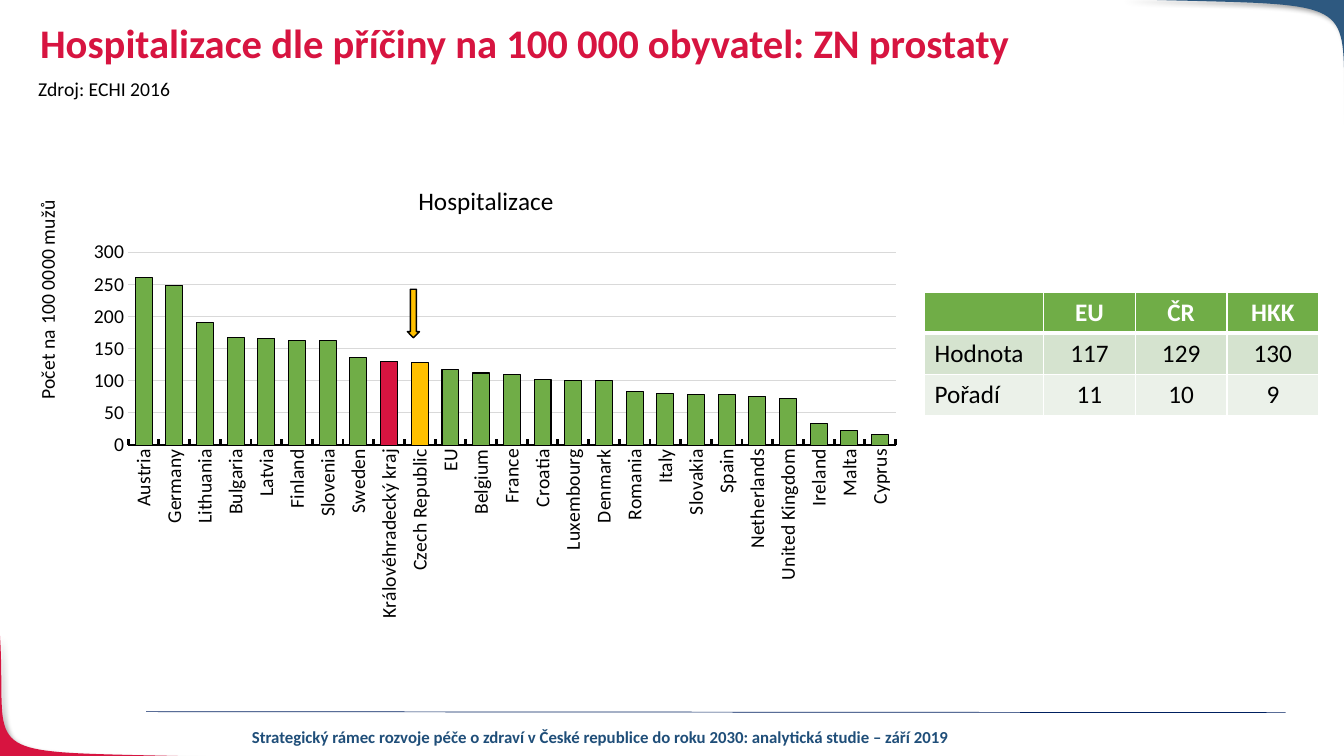
from lxml import etree
from pptx import Presentation
from pptx.chart.data import CategoryChartData
from pptx.dml.color import RGBColor
from pptx.enum.chart import XL_CHART_TYPE, XL_TICK_MARK
from pptx.enum.shapes import MSO_CONNECTOR, MSO_SHAPE
from pptx.enum.text import PP_ALIGN
from pptx.oxml import parse_xml
from pptx.oxml.ns import nsdecls, qn
from pptx.util import Inches, Pt

BLACK = RGBColor(0x00, 0x00, 0x00)
WHITE = RGBColor(0xFF, 0xFF, 0xFF)
RED = RGBColor(0xD7, 0x14, 0x40)
BLUE = RGBColor(0x2E, 0x59, 0x80)
NAVY = RGBColor(0x00, 0x20, 0x60)
FOOTER_BLUE = RGBColor(0x1F, 0x4E, 0x79)
GREEN = RGBColor(0x70, 0xAD, 0x47)
YELLOW = RGBColor(0xFF, 0xC0, 0x00)
GRID = RGBColor(0xD9, 0xD9, 0xD9)
ROW_FILLS = [GREEN, RGBColor(0xD5, 0xE3, 0xCF), RGBColor(0xEB, 0xF1, 0xE9)]

HOSPITALIZATIONS = {
    "Austria": 261, "Germany": 248, "Lithuania": 190, "Bulgaria": 167, "Latvia": 166,
    "Finland": 163, "Slovenia": 163, "Sweden": 136, "Královéhradecký kraj": 130,
    "Czech Republic": 129, "EU": 117, "Belgium": 112, "France": 109, "Croatia": 102,
    "Luxembourg": 101, "Denmark": 100, "Romania": 83, "Italy": 80, "Slovakia": 79,
    "Spain": 79, "Netherlands": 76, "United Kingdom": 72, "Ireland": 34, "Malta": 22,
    "Cyprus": 16,
}
HIGHLIGHTS = {"Královéhradecký kraj": RED, "Czech Republic": YELLOW}
RANKING = [["", "EU", "ČR", "HKK"], ["Hodnota", "117", "129", "130"], ["Pořadí", "11", "10", "9"]]


def set_attributes(target, values):
    for name, value in values.items():
        setattr(target, name, value)


def set_font(font, size, color=BLACK, bold=False):
    set_attributes(font, {"name": "Calibri", "size": Pt(size), "bold": bold})
    font.color.rgb = color


def paint(part, fill, line=None, width=0.75):
    part.fill.solid()
    part.fill.fore_color.rgb = fill
    if line is None:
        part.line.fill.background()
    else:
        part.line.color.rgb = line
        part.line.width = Pt(width)


def add_text(slide, box, text, size, color, bold=False, wrap=True,
             align=PP_ALIGN.LEFT, spacing=1.0):
    frame = slide.shapes.add_textbox(*map(Inches, box)).text_frame
    frame.word_wrap = wrap
    paragraph = frame.paragraphs[0]
    set_attributes(paragraph, {"text": text, "alignment": align, "line_spacing": spacing})
    set_font(paragraph.font, size, color, bold)


def add_corner(slide, start, control_1, control_2, end, corner, color, steps=40):
    # Cubic curve from start to end, closed through the slide corner
    points = []
    for step in range(1, steps + 1):
        t = step / steps
        weights = ((1 - t) ** 3, 3 * t * (1 - t) ** 2, 3 * t ** 2 * (1 - t), t ** 3)
        points.append([Inches(sum(w * p[axis] for w, p in
                                  zip(weights, (start, control_1, control_2, end))))
                       for axis in (0, 1)])
    builder = slide.shapes.build_freeform(*map(Inches, start), scale=1.0)
    builder.add_line_segments(points + [list(map(Inches, corner))], close=True)
    shape = builder.convert_to_shape()
    paint(shape, color)
    shape._element.spPr.append(parse_xml(
        f'<a:effectLst {nsdecls("a")}><a:outerShdw blurRad="{Pt(4)}" dist="{Pt(3)}" '
        'dir="2700000" algn="tl" rotWithShape="0"><a:srgbClr val="000000">'
        '<a:alpha val="40000"/></a:srgbClr></a:outerShdw></a:effectLst>'))


def add_background(slide):
    add_corner(slide, (2.13, 7.51), (-0.34, 7.44), (0.08, 7.59), (0, 6.3), (-0.01, 7.51), RED)
    add_corner(slide, (11.11, -0.01), (13.7, 0.07), (13.26, -0.1), (13.35, 1.42),
               (13.35, -0.01), BLUE)


def add_footer(slide, left, top, width):
    rule = slide.shapes.add_connector(MSO_CONNECTOR.STRAIGHT, Inches(left), Inches(top),
                                      Inches(left + width), Inches(top + 0.01))
    rule.line.color.rgb = NAVY
    rule.line.width = Pt(0.5)
    etree.SubElement(rule._element.spPr, qn("a:effectLst"))
    add_text(slide, (left + 0.46, top + 0.1, 8.09, 0.3),
             "Strategický rámec rozvoje péče o zdraví v České republice do roku 2030: "
             "analytická studie – září 2019", 12, FOOTER_BLUE, True, align=PP_ALIGN.CENTER)


def add_header(slide, left, top, width):
    add_text(slide, (left - 0.02, top + 0.53, 1.52, 0.34), "Zdroj: ECHI 2016", 14, BLACK,
             wrap=False)
    add_text(slide, (left, top, width, 0.69),
             "Hospitalizace dle příčiny na 100 000 obyvatel: ZN prostaty", 29, RED, True,
             spacing=0.9)


def set_layout(parent, index, **lengths):
    for layout in parent.findall(qn("c:layout")):
        parent.remove(layout)
    target = '<c:layoutTarget val="inner"/>' if "w" in lengths else ""
    modes = "".join(f'<c:{key}Mode val="edge"/>' for key in ("x", "y"))
    values = "".join(f'<c:{key} val="{value}"/>' for key, value in lengths.items())
    parent.insert(index, parse_xml(f'<c:layout {nsdecls("c")}><c:manualLayout>{target}{modes}'
                                   f'{values}</c:manualLayout></c:layout>'))


def set_title(title, text, size, x, y):
    title.text_frame.text = text
    set_font(title.text_frame.paragraphs[0].runs[0].font, size)
    set_layout(title._element, 1, x=x, y=y)


def add_hospital_chart(slide, left, top, width, height):
    data = CategoryChartData(number_format="#,##0")
    data.categories = list(HOSPITALIZATIONS)
    data.add_series("Series 1", list(HOSPITALIZATIONS.values()))
    chart = slide.shapes.add_chart(XL_CHART_TYPE.COLUMN_CLUSTERED,
                                   *map(Inches, (left, top, width, height)), data).chart
    set_font(chart.font, 10)
    chart.has_legend = False
    chart.has_title = True
    set_title(chart.chart_title, "Hospitalizace", 18, 0.44, 0.02)

    # Columns
    plot = chart.plots[0]
    set_attributes(plot, {"gap_width": 81, "overlap": -27, "vary_by_categories": False})
    series = plot.series[0]
    paint(series.format, GREEN, BLACK)
    for index, country in enumerate(HOSPITALIZATIONS):
        if country in HIGHLIGHTS:
            paint(series.points[index].format, HIGHLIGHTS[country], BLACK)
    set_layout(plot._element.getparent(), 0, x=0.12, y=0.18, w=0.86, h=0.42)

    # Axes
    countries, values = chart.category_axis, chart.value_axis
    set_attributes(countries, {"major_tick_mark": XL_TICK_MARK.INSIDE,
                               "has_major_gridlines": False})
    countries.format.line.color.rgb = BLACK
    countries.format.line.width = Pt(2)
    set_attributes(values, {"major_tick_mark": XL_TICK_MARK.NONE, "minimum_scale": 0,
                            "maximum_scale": 300, "major_unit": 50, "has_title": True})
    values.format.line.fill.background()
    values.major_gridlines.format.line.color.rgb = GRID
    values.major_gridlines.format.line.width = Pt(0.75)
    for axis in (countries, values):
        set_font(axis.tick_labels.font, 14)
    set_title(values.axis_title, "Počet na 100 0000 mužů", 14, 0.01, 0.06)
    for part in (countries._element.find(qn("c:txPr")), values.axis_title._element):
        body = next(part.iter(qn("a:bodyPr")))
        body.set("rot", "-5400000")
        body.set("vert", "horz")

    # Arrow above the Czech column
    arrow = slide.shapes.add_shape(MSO_SHAPE.DOWN_ARROW, Inches(left + 3.83),
                                   Inches(top + 1.19), Inches(0.12), Inches(0.48))
    arrow.shadow.inherit = False
    paint(arrow, YELLOW, BLACK, 1)


def set_borders(cell, bottom):
    properties = cell._tc.get_or_add_tcPr()
    for index, (side, width) in enumerate((("L", 1), ("R", 1), ("T", 1), ("B", bottom))):
        properties.insert(index, parse_xml(
            f'<a:ln{side} {nsdecls("a")} w="{Pt(width)}"><a:solidFill>'
            f'<a:srgbClr val="{WHITE}"/></a:solidFill></a:ln{side}>'))


def add_ranking_table(slide, left, top, width, height):
    table = slide.shapes.add_table(len(RANKING), len(RANKING[0]),
                                   *map(Inches, (left, top, width, height))).table
    for index, column in enumerate(table.columns):
        column.width = Inches(0.91 if index else 1.18)
    for row_index, row in enumerate(RANKING):
        is_header = row_index == 0
        for column_index, text in enumerate(row):
            cell = table.cell(row_index, column_index)
            cell.fill.solid()
            cell.fill.fore_color.rgb = ROW_FILLS[row_index]
            set_borders(cell, 3 if is_header else 1)
            paragraph = cell.text_frame.paragraphs[0]
            paragraph.text = text
            paragraph.alignment = PP_ALIGN.CENTER if column_index else PP_ALIGN.LEFT
            set_font(paragraph.font, 18, WHITE if is_header else BLACK, is_header)


def main():
    presentation = Presentation()
    set_attributes(presentation, {"slide_width": Inches(13.33), "slide_height": Inches(7.5)})
    slide = presentation.slides.add_slide(presentation.slide_layouts[6])
    add_background(slide)
    add_footer(slide, 1.45, 7.06, 11.3)
    add_header(slide, 0.3, 0.18, 11.5)
    add_hospital_chart(slide, 0.21, 1.68, 8.85, 4.56)
    add_ranking_table(slide, 9.17, 2.9, 3.91, 1.22)
    presentation.save("out.pptx")


if __name__ == "__main__":
    main()
